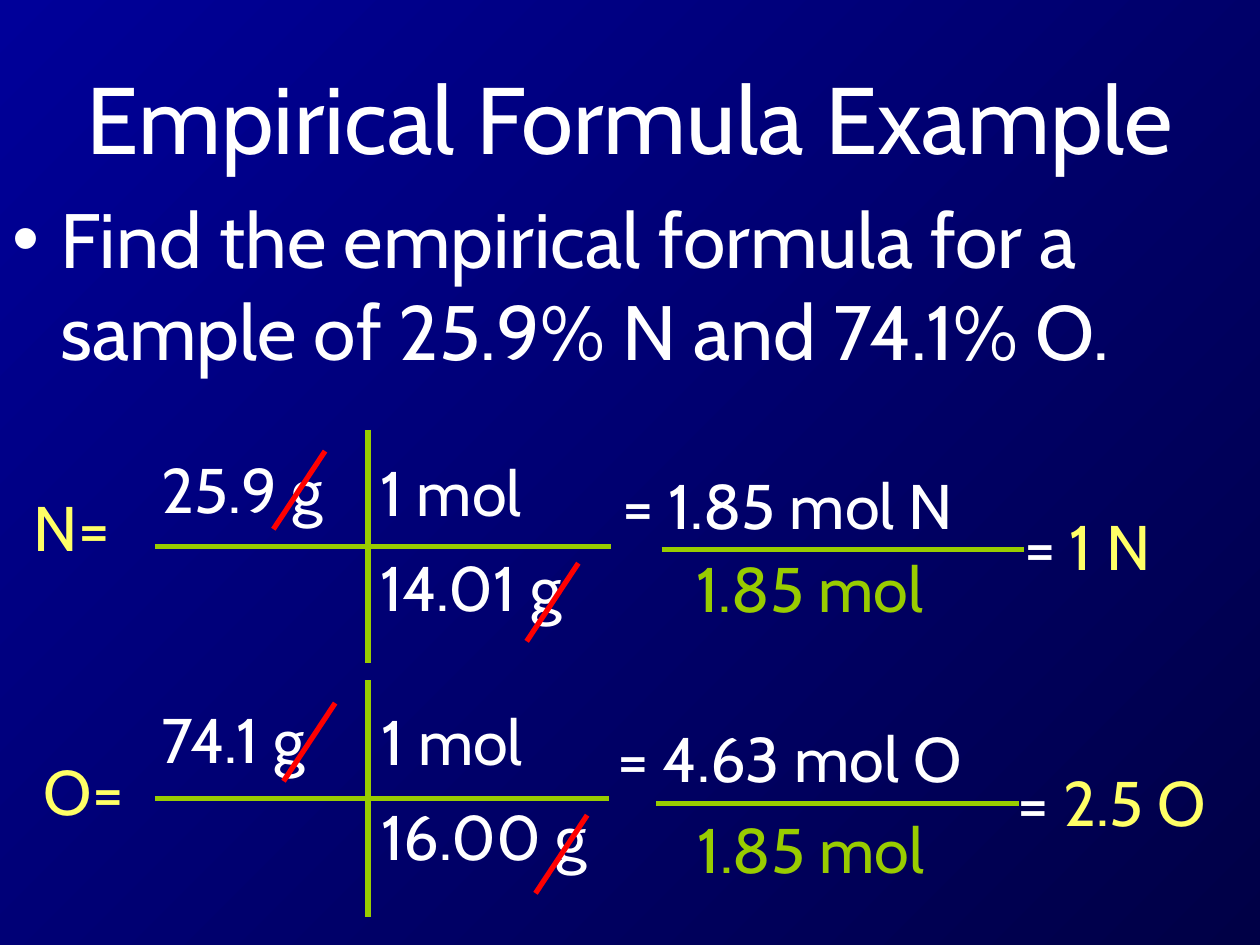
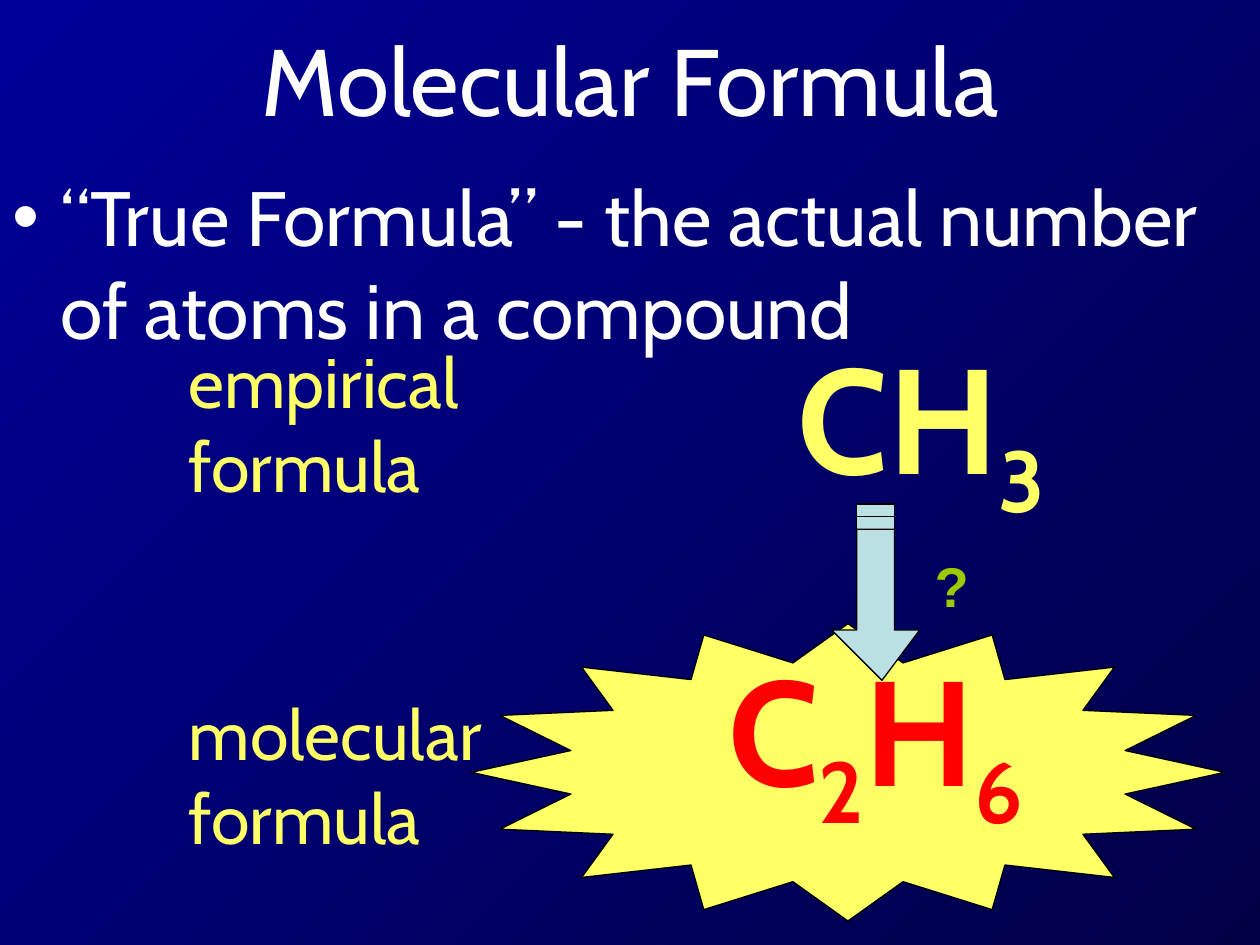
"""Builds two chemistry slides on empirical and molecular formulas."""
from dataclasses import dataclass

from lxml.etree import SubElement
from pptx import Presentation
from pptx.dml.color import RGBColor
from pptx.enum.shapes import MSO_CONNECTOR, MSO_SHAPE
from pptx.enum.text import MSO_ANCHOR, PP_ALIGN
from pptx.oxml.ns import qn
from pptx.util import Inches, Pt

CELL = Inches(0.1)
COLUMNS, ROWS = 100, 75
COLORS = {
    "white": "FFFFFF", "yellow": "FFFF66", "green": "99CC00", "red": "FF0000",
    "pale": "BBE0E3", "black": "000000", "sky": "000099", "night": "000046",
}
SLASH_WIDTH, SLASH_HEIGHT = 4.1, 6.2
TEXT_HEIGHT = 8.6


@dataclass(frozen=True)
class Box:
    """A rectangle in grid columns and rows."""
    left: float
    top: float
    width: float
    height: float = TEXT_HEIGHT


@dataclass(frozen=True)
class Part:
    """A stretch of text with its colour and subscript state."""
    words: str
    color: str = "white"
    subscript: bool = False


@dataclass(frozen=True)
class Style:
    """The look of a text."""
    size: int = 36
    font: str = "Cabin"
    bold: bool = False
    align: PP_ALIGN = PP_ALIGN.LEFT
    anchor: MSO_ANCHOR = MSO_ANCHOR.TOP
    gap: float = 0
    hanging: float = 0


@dataclass(frozen=True)
class Label:
    """Lines of text, each made of parts, in a box."""
    box: Box
    lines: tuple
    style: Style = Style()


@dataclass(frozen=True)
class Stroke:
    """A straight line between two grid points."""
    start: tuple
    end: tuple
    color: str = "green"


@dataclass(frozen=True)
class Conversion:
    """One element's way from mass to mole ratio."""
    labels: tuple
    table_right: float
    table_top: float
    table_bottom: float
    table_row: float
    divide_left: float
    divide_row: float
    slashes: tuple


CALCULATION = Style()
FACTOR = Style(gap=10.8)
TITLE = Style(size=54, align=PP_ALIGN.CENTER, anchor=MSO_ANCHOR.MIDDLE)
BODY = Style(size=44, hanging=3.8)
CAPTION = Style(size=40)
FORMULA = Style(size=85, bold=True, align=PP_ALIGN.CENTER)
QUESTION = Style(size=32, font="Arial", bold=True)

CONVERSIONS = (
    Conversion(
        labels=(
            Label(Box(1.7, 38.3, 11.7), ((Part("N=", "yellow"),),)),
            Label(Box(11.8, 35.3, 18.8), ((Part("25.9 g"),),)),
            Label(Box(29.2, 35.5, 33.2, 16.5), ((Part("1 mol"),), (Part("14.01 g"),)), FACTOR),
            Label(Box(48.4, 36.5, 44.6), ((Part("= 1.85 mol N"),),)),
            Label(Box(54.3, 43.1, 24), ((Part("1.85 mol", "green"),),)),
            Label(Box(80.3, 39.8, 15.6), ((Part("= "), Part("1 N", "yellow")),)),
        ),
        table_right=48.5, table_top=34.1, table_bottom=52.6, table_row=43.4,
        divide_left=52.5, divide_row=43.6, slashes=((25.8, 35.8), (45.9, 44.7)),
    ),
    Conversion(
        labels=(
            Label(Box(2.5, 59.2, 13.3), ((Part("O=", "yellow"),),)),
            Label(Box(11.8, 55.1, 18.8), ((Part("74.1 g"),),)),
            Label(Box(29.3, 55.3, 33.2, 16.5), ((Part("1 mol"),), (Part("16.00 g"),)), FACTOR),
            Label(Box(48, 56.6, 44.6), ((Part("= 4.63 mol O"),),)),
            Label(Box(54.4, 63.8, 24), ((Part("1.85 mol", "green"),),)),
            Label(Box(79.8, 60.1, 20.2), ((Part("= "), Part("2.5 O", "yellow")),)),
        ),
        table_right=48.3, table_top=54, table_bottom=72.8, table_row=63.4,
        divide_left=52.1, divide_row=63.8, slashes=((26.6, 55.8), (46.6, 64.7)),
    ),
)
TABLE_LEFT, TABLE_MIDDLE, DIVIDE_WIDTH = 12.3, 29.2, 28.8

EMPIRICAL = Label(
    Box(48.5, 25.4, 49.2, 22.4),
    ((Part("CH", "yellow"), Part("3", "yellow", True)),), FORMULA)
MOLECULAR = Label(
    Box(48.9, 50.1, 41.2, 20.6),
    ((Part("C", "red"), Part("2", "red", True), Part("H", "red"), Part("6", "red", True)),), FORMULA)
CAPTIONS = (
    Label(Box(14, 26.4, 26.2, 14.5), ((Part("empirical", "yellow"),), (Part("formula", "yellow"),)), CAPTION),
    Label(Box(14, 54.3, 28.7, 14.1), ((Part("molecular", "yellow"),), (Part("formula", "yellow"),)), CAPTION),
    Label(Box(73.2, 43.3, 6, 6.3), ((Part("?", "green"),),), QUESTION),
)
BURST = Box(37.4, 49.5, 59.8, 23.6)
SHAFT_LEFT, SHAFT_RIGHT = 67.8, 71.4
ARROW_HEAD = ((73.3, 50.5), (69.6, 53.9), (66, 50.5))
STRIPES = ((40.1, 40.6), (41, 41.9))
SHAFT_TOP, SHAFT_BOTTOM = 42.3, 50.5


def grid(value: float) -> int:
    """Turn a count of grid cells into a length."""
    return round(value * CELL)


def rgb(color: str) -> RGBColor:
    """Look up a colour."""
    return RGBColor.from_string(COLORS[color])


def placed(box: Box) -> tuple:
    """Give a box as lengths."""
    return grid(box.left), grid(box.top), grid(box.width), grid(box.height)


def draw_label(slide, label: Label) -> None:
    """Write a label on the slide."""
    style = label.style
    frame = slide.shapes.add_textbox(*placed(label.box)).text_frame
    frame.word_wrap = True
    frame.vertical_anchor = style.anchor
    for number, parts in enumerate(label.lines):
        paragraph = frame.add_paragraph() if number else frame.paragraphs[0]
        paragraph.alignment = style.align
        if number:
            paragraph.space_before = Pt(style.gap)
        if style.hanging:
            properties = paragraph._p.get_or_add_pPr()
            properties.set("marL", str(grid(style.hanging)))
            properties.set("indent", str(-grid(style.hanging)))
            SubElement(properties, qn("a:buFont"), typeface="Arial")
            SubElement(properties, qn("a:buChar"), char="•")
        for part in parts:
            run = paragraph.add_run()
            run.text = part.words
            run.font.name = style.font
            run.font.size = Pt(style.size)
            run.font.bold = style.bold
            run.font.color.rgb = rgb(part.color)
            if part.subscript:
                run.font._element.set("baseline", "-25000")


def draw_stroke(slide, stroke: Stroke) -> None:
    """Draw a straight line."""
    ends = [grid(value) for value in (*stroke.start, *stroke.end)]
    connector = slide.shapes.add_connector(MSO_CONNECTOR.STRAIGHT, *ends)
    connector.line.color.rgb = rgb(stroke.color)
    connector.line.width = Pt(3)
    SubElement(connector._element.spPr, qn("a:effectLst"))


def paint(shape, color: str) -> None:
    """Fill a shape and outline it in black."""
    shape.shadow.inherit = False
    shape.fill.solid()
    shape.fill.fore_color.rgb = rgb(color)
    shape.line.color.rgb = rgb("black")
    shape.line.width = Pt(0.75)


def draw_conversion(slide, conversion: Conversion) -> None:
    """Draw one element's calculation with its crossed-out units."""
    for label in conversion.labels:
        draw_label(slide, label)
    row, divide = conversion.table_row, conversion.divide_row
    strokes = [
        Stroke((TABLE_LEFT, row), (conversion.table_right, row)),
        Stroke((TABLE_MIDDLE, conversion.table_top), (TABLE_MIDDLE, conversion.table_bottom)),
        Stroke((conversion.divide_left, divide), (conversion.divide_left + DIVIDE_WIDTH, divide)),
    ]
    strokes += [Stroke((x, y), (x - SLASH_WIDTH, y + SLASH_HEIGHT), "red")
                for x, y in conversion.slashes]
    for stroke in strokes:
        draw_stroke(slide, stroke)


def draw_striped_arrow(slide) -> None:
    """Draw the downward arrow with a striped tail."""
    outlines = [((SHAFT_LEFT, SHAFT_TOP), (SHAFT_RIGHT, SHAFT_TOP),
                 (SHAFT_RIGHT, SHAFT_BOTTOM), *ARROW_HEAD, (SHAFT_LEFT, SHAFT_BOTTOM))]
    outlines += [((SHAFT_LEFT, top), (SHAFT_RIGHT, top), (SHAFT_RIGHT, bottom), (SHAFT_LEFT, bottom))
                 for top, bottom in STRIPES]
    builder = slide.shapes.build_freeform(*outlines[0][0], scale=float(CELL))
    for number, (first, *others) in enumerate(outlines):
        if number:
            builder.move_to(*first)
        builder.add_line_segments(others, close=True)
    paint(builder.convert_to_shape(), "pale")


def add_slide(deck, title: str, title_top: float, body: str, body_top: float):
    """Add a slide with the shared gradient, title and bullet."""
    slide = deck.slides.add_slide(deck.slide_layouts[6])
    fill = slide.background.fill
    fill.gradient()
    fill.gradient_angle = 315
    for stop, color in zip(fill.gradient_stops, ("sky", "night")):
        stop.color.rgb = rgb(color)
    draw_label(slide, Label(Box(5, title_top, 90, 12.5), ((Part(title),),), TITLE))
    draw_label(slide, Label(Box(0, body_top, COLUMNS, 18), ((Part(body),),), BODY))
    return slide


def main() -> None:
    """Build and save the deck."""
    deck = Presentation()
    deck.slide_width, deck.slide_height = grid(COLUMNS), grid(ROWS)

    example = add_slide(deck, "Empirical Formula Example", 3,
                        "Find the empirical formula for a sample of 25.9% N and 74.1% O.", 14.7)
    for conversion in CONVERSIONS:
        draw_conversion(example, conversion)

    molecular = add_slide(deck, "Molecular Formula", 0,
                          "“True Formula” - the actual number of atoms in a compound", 13)
    draw_label(molecular, EMPIRICAL)
    paint(molecular.shapes.add_shape(MSO_SHAPE.STAR_16_POINT, *placed(BURST)), "yellow")
    draw_label(molecular, MOLECULAR)
    draw_striped_arrow(molecular)
    for caption in CAPTIONS:
        draw_label(molecular, caption)

    deck.save("out.pptx")


if __name__ == "__main__":
    main()
